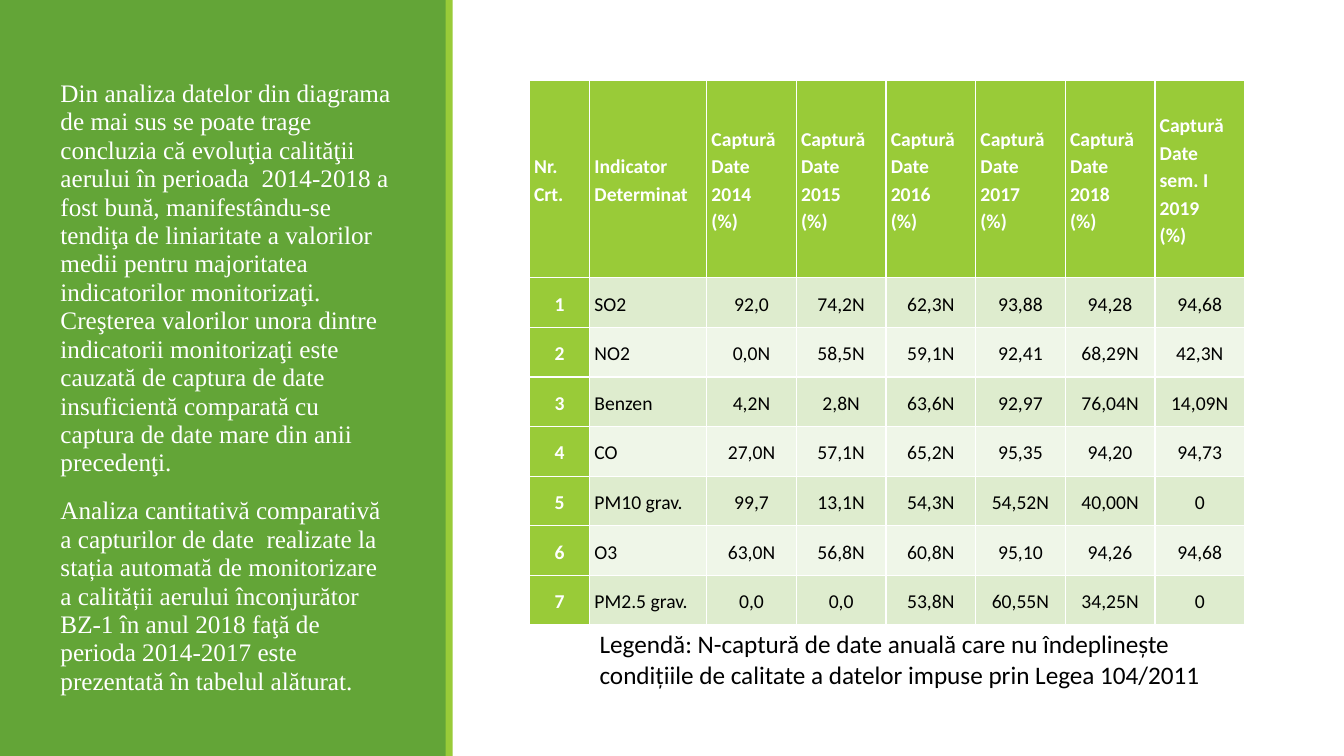
from lxml.etree import SubElement
from pptx import Presentation
from pptx.dml.color import RGBColor
from pptx.enum.shapes import MSO_SHAPE
from pptx.enum.text import MSO_ANCHOR as Anchor, PP_ALIGN as Align
from pptx.oxml.ns import qn
from pptx.util import Cm, Pt

GREEN, LIME = "63A537", "99CB38"
BANDS = ["DEECCE", "EFF6E8"]
WHITE, BLACK = "FFFFFF", "000000"


def color(hex_code):
    return RGBColor.from_string(hex_code)


def format_runs(p, font, size, hex_code, bold=False):
    for r in p.runs:
        r.font.name, r.font.size, r.font.bold = font, Pt(size), bold
        r.font.color.rgb = color(hex_code)


prs = Presentation()
prs.slide_width, prs.slide_height = Cm(33.87), Cm(19.05)
slide = prs.slides.add_slide(prs.slide_layouts[1])
title, body = slide.placeholders
title.element.getparent().remove(title.element)

# Side panel and its accent stripe, behind the body text
for i, (left, width, fill) in enumerate([(0, 11.25, GREEN), (11.23, 0.18, LIME)]):
    sp = slide.shapes.add_shape(MSO_SHAPE.RECTANGLE, Cm(left), 0, Cm(width), prs.slide_height)
    sp.shadow.inherit = False
    sp.fill.solid()
    sp.fill.fore_color.rgb = color(fill)
    sp.line.fill.background()
    body.element.getparent().insert(2 + i, sp.element)

# Analysis text
body.left, body.top, body.width, body.height = Cm(1.27), Cm(2.03), Cm(8.89), Cm(15.49)
tf = body.text_frame
tf.word_wrap = True
tf.vertical_anchor = Anchor.MIDDLE
tf.text = (
    "Din analiza datelor din diagrama de mai sus se poate trage concluzia că evoluţia "
    "calităţii aerului în perioada  2014-2018 a fost bună, manifestându-se tendiţa de "
    "liniaritate a valorilor medii pentru majoritatea indicatorilor monitorizaţi. "
    "Creşterea valorilor unora dintre indicatorii monitorizaţi este cauzată de captura "
    "de date insuficientă comparată cu captura de date mare din anii precedenţi.\n"
    "Analiza cantitativă comparativă a capturilor de date  realizate la stația automată "
    "de monitorizare a calității aerului înconjurător  BZ-1 în anul 2018 faţă de perioda "
    "2014-2017 este prezentată în tabelul alăturat."
)
for p in tf.paragraphs:
    p.line_spacing, p.space_before, p.space_after = 0.94, Pt(12), Pt(2)
    pPr = p._p.get_or_add_pPr()
    pPr.set("marL", "0")
    pPr.set("indent", "0")
    SubElement(pPr, qn("a:buNone"))
    format_runs(p, "Times New Roman", 18, WHITE)

# Legend below the table
legend = slide.shapes.add_textbox(Cm(14.86), Cm(15.72), Cm(16.94), Cm(1.8))
tf = legend.text_frame
tf.word_wrap = True
tf.text = ("Legendă: N-captură de date anuală care nu îndeplinește condițiile de calitate "
           "a datelor impuse prin Legea 104/2011")
format_runs(tf.paragraphs[0], "Calibri", 18, BLACK)

# Data capture table
periods = ["2014", "2015", "2016", "2017", "2018", "sem. I 2019"]
rows = [
    ["Nr. Crt.", "Indicator\nDeterminat"] + [f"Captură Date {period}\n(%)" for period in periods],
    ["1", "SO2", "92,0", "74,2N", "62,3N", "93,88", "94,28", "94,68"],
    ["2", "NO2", "0,0N", "58,5N", "59,1N", "92,41", "68,29N", "42,3N"],
    ["3", "Benzen", "4,2N", "2,8N", "63,6N", "92,97", "76,04N", "14,09N"],
    ["4", "CO", "27,0N", "57,1N", "65,2N", "95,35", "94,20", "94,73"],
    ["5", "PM10 grav.", "99,7", "13,1N", "54,3N", "54,52N", "40,00N", "0"],
    ["6", "O3", "63,0N", "56,8N", "60,8N", "95,10", "94,26", "94,68"],
    ["7", "PM2.5 grav.", "0,0", "0,0", "53,8N", "60,55N", "34,25N", "0"],
]
col_widths = [1.52, 2.95] + [2.26] * len(periods)
row_heights = [4.97] + [1.25] * (len(rows) - 1)
table = slide.shapes.add_table(len(rows), len(col_widths), Cm(13.34), Cm(2.03),
                               Cm(sum(col_widths)), Cm(sum(row_heights))).table
table.first_col = True
for column, width in zip(table.columns, col_widths):
    column.width = Cm(width)
for row, height in zip(table.rows, row_heights):
    row.height = Cm(height)

for i, texts in enumerate(rows):
    for j, text in enumerate(texts):
        cell = table.cell(i, j)
        heading = i == 0 or j == 0
        cell.fill.solid()
        cell.fill.fore_color.rgb = color(LIME if heading else BANDS[(i - 1) % 2])
        cell.vertical_anchor = Anchor.MIDDLE
        cell.margin_left = cell.margin_right = Cm(0.12)
        cell.margin_top = cell.margin_bottom = 0
        cell.text_frame.text = text
        for p in cell.text_frame.paragraphs:
            p.line_spacing = 1.15
            p.alignment = Align.LEFT if i == 0 or j == 1 else Align.CENTER
            if i > 0:
                p.space_after = Pt(10)
            format_runs(p, "Calibri", 14, WHITE if heading else BLACK, heading)

prs.save("out.pptx")
